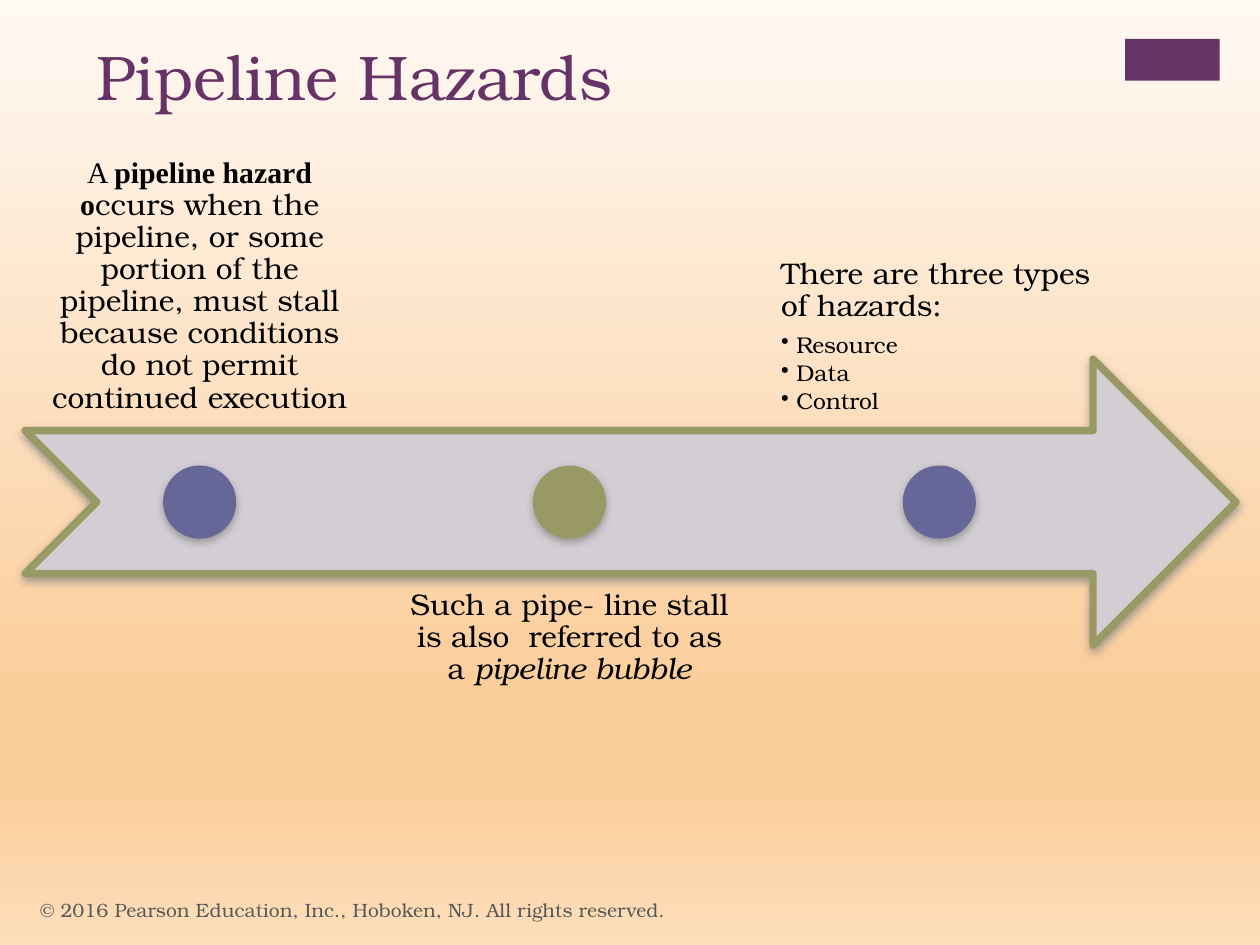
from lxml.etree import SubElement
from pptx import Presentation
from pptx.dml.color import RGBColor
from pptx.enum.shapes import MSO_SHAPE as SHAPE
from pptx.enum.text import MSO_ANCHOR as ANCHOR, PP_ALIGN as ALIGN
from pptx.oxml.ns import qn
from pptx.util import Inches, Pt

SERIF, TIMES = "TeX Gyre Bonum", "Times New Roman"
PURPLE, BLUE, OLIVE, LILAC = "663366", "666699", "999966", "D3CED3"
BLACK, GREY = "000000", "595959"
BACKGROUND = [(0, "FFF9F4"), (74, "FBCD9A"), (83, "FBCD9A"), (100, "FDDEBB")]

TITLE = "Pipeline Hazards"
COPYRIGHT = "© 2016 Pearson Education, Inc., Hoboken, NJ. All rights reserved."

# Each run is (text, font options)
DEFINITION = [
    ("A ", dict(name=TIMES)),
    ("pipeline hazard o", dict(name=TIMES, bold=True)),
    ("ccurs when the pipeline, or some portion of the pipeline, must stall "
     "because conditions do not permit continued execution", {}),
]
BUBBLE = [
    ("Such a pipe- line stall is also  referred to as a ", {}),
    ("pipeline bubble", dict(italic=True)),
]
TYPES_HEAD = [("There are three types of hazards:", {})]
TYPES = ["Resource", "Data", "Control"]

# Milestones: dot colour, text width, text top, anchor, alignment, runs, bullets
MILESTONES = [
    (BLUE, 2.77, 1.15, ANCHOR.BOTTOM, ALIGN.CENTER, DEFINITION, []),
    (OLIVE, 2.82, 4.55, ANCHOR.TOP, ALIGN.CENTER, BUBBLE, []),
    (BLUE, 2.77, 1.15, ANCHOR.BOTTOM, ALIGN.LEFT, TYPES_HEAD, TYPES),
]
FIRST_X, STEP_X, DOT, DOT_TOP, TEXT_H = 1.585, 2.935, 0.57, 3.7, 2.27


def rgb(color):
    return RGBColor.from_string(color)


def add_shape(s, kind, box, fill, line=None, width=0.75, shadow=False):
    sp = s.shapes.add_shape(kind, *map(Inches, box))
    sp.shadow.inherit = False
    sp.fill.solid()
    sp.fill.fore_color.rgb = rgb(fill)
    if line:
        sp.line.color.rgb = rgb(line)
        sp.line.width = Pt(width)
    else:
        sp.line.fill.background()
    if shadow:
        effects = sp._element.spPr.find(qn("a:effectLst"))
        outer = SubElement(effects, qn("a:outerShdw"), blurRad=str(Pt(5)),
                           dist=str(Pt(2)), dir="5400000", rotWithShape="0")
        clr = SubElement(outer, qn("a:srgbClr"), val="808080")
        SubElement(clr, qn("a:alpha"), val="75000")
    return sp


def add_box(s, box, anchor=ANCHOR.TOP, inset=None):
    tf = s.shapes.add_textbox(*map(Inches, box)).text_frame
    tf.word_wrap = True
    tf.vertical_anchor = anchor
    if inset:
        tf.margin_left = tf.margin_right = Inches(inset)
        tf.margin_top = tf.margin_bottom = Inches(inset)
    return tf


def add_run(p, text, size=17, name=SERIF, color=BLACK, bold=False, italic=False):
    r = p.add_run()
    r.text = text
    r.font.size, r.font.name = Pt(size), name
    r.font.bold, r.font.italic = bold, italic
    r.font.color.rgb = rgb(color)


def add_bullet(p, indent=0.12):
    pPr = p._p.get_or_add_pPr()
    pPr.set("marL", str(Inches(indent)))
    pPr.set("indent", str(-Inches(indent)))
    SubElement(pPr, qn("a:buChar"), char="•")


prs = Presentation()
prs.slide_width, prs.slide_height = Inches(10), Inches(7.5)
s = prs.slides.add_slide(prs.slide_layouts[6])

# Background gradient, top to bottom
fill = s.background.fill
fill.gradient()
fill.gradient_angle = 270
stops = next(s._element.iter(qn("a:gsLst")))
for stop in list(stops):
    stops.remove(stop)
for pos, color in BACKGROUND:
    stop = SubElement(stops, qn("a:gs"), pos=str(pos * 1000))
    SubElement(stop, qn("a:srgbClr"), val=color)

# Corner block and title
add_shape(s, SHAPE.RECTANGLE, (8.93, 0.31, 0.75, 0.33), PURPLE)
tf = add_box(s, (0.67, 0.25, 8.26, 1.22))
add_run(tf.paragraphs[0], TITLE, size=36, color=PURPLE)

# Timeline arrow
add_shape(s, SHAPE.NOTCHED_RIGHT_ARROW, (0.2, 2.85, 9.61, 2.27), LILAC,
          line=OLIVE, width=4.25, shadow=True)

# Milestones: text and dot share a centre line
for i, (color, width, top, anchor, align, runs, bullets) in enumerate(MILESTONES):
    center = FIRST_X + i * STEP_X
    tf = add_box(s, (center - width / 2, top, width, TEXT_H), anchor, inset=0.13)
    p = tf.paragraphs[0]
    p.alignment, p.line_spacing, p.space_after = align, 0.9, Pt(6)
    for text, fmt in runs:
        add_run(p, text, **fmt)
    for text in bullets:
        p = tf.add_paragraph()
        p.level, p.line_spacing, p.space_after = 1, 0.9, Pt(2)
        add_bullet(p)
        add_run(p, text, size=13)
    add_shape(s, SHAPE.OVAL, (center - DOT / 2, DOT_TOP, DOT, DOT), color,
              line=color, shadow=True)

# Footer
tf = add_box(s, (0.22, 7.02, 6.7, 0.4), ANCHOR.MIDDLE)
add_run(tf.paragraphs[0], COPYRIGHT, size=11, color=GREY)

prs.save("out.pptx")
